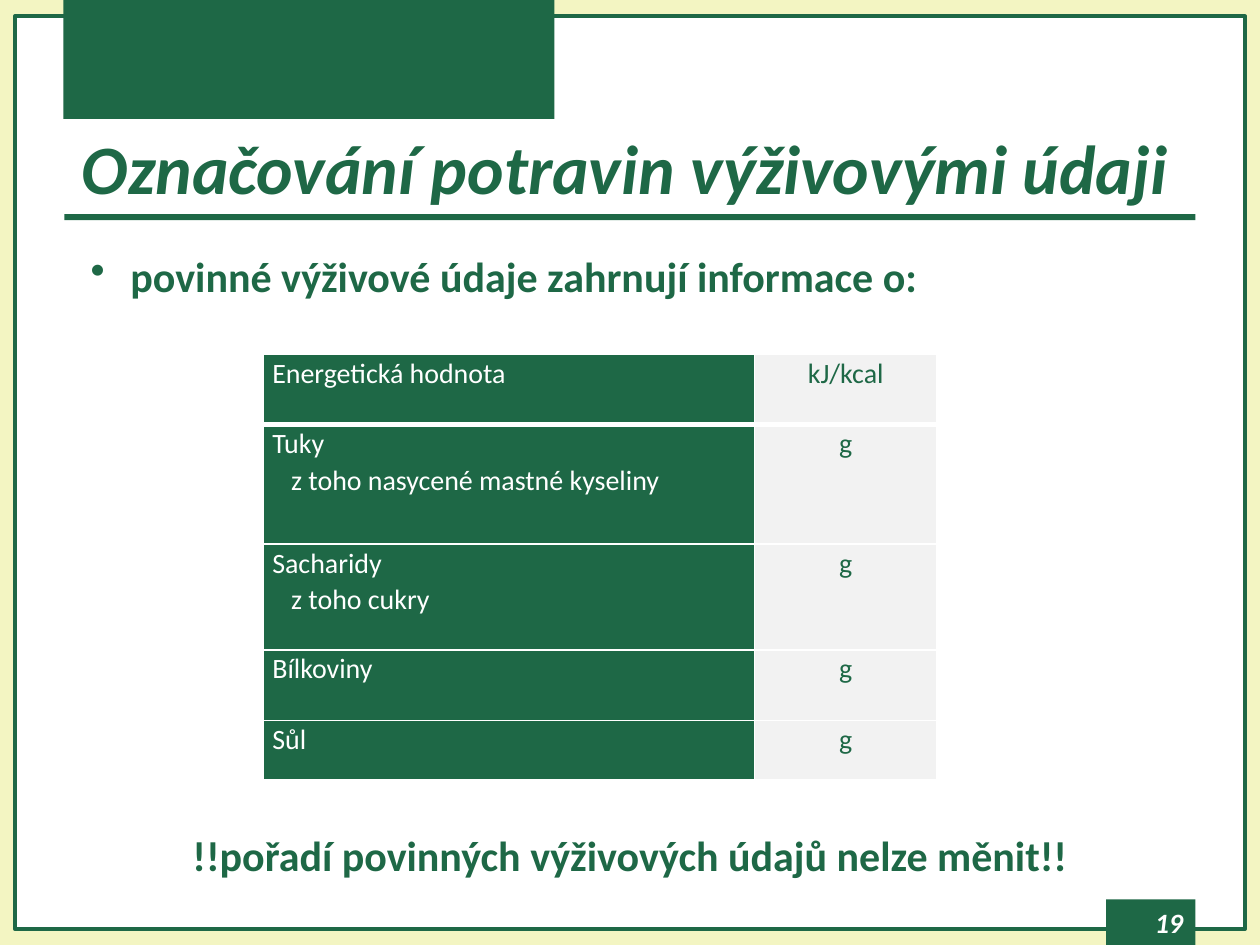
from dataclasses import dataclass

import lxml.etree
import pptx
import pptx.dml.color
import pptx.enum.shapes
import pptx.enum.text
import pptx.oxml.ns
import pptx.util

Cm = pptx.util.Cm
Pt = pptx.util.Pt
RGBColor = pptx.dml.color.RGBColor
Align = pptx.enum.text.PP_ALIGN
Anchor = pptx.enum.text.MSO_ANCHOR

GREEN = RGBColor(0x1E, 0x68, 0x46)
CREAM = RGBColor(0xF3, 0xF5, 0xC2)
GREY = RGBColor(0xF2, 0xF2, 0xF2)
WHITE = RGBColor(0xFF, 0xFF, 0xFF)
FONT = "Calibri"


@dataclass
class Area:
    left: float
    top: float
    width: float
    height: float

    def lengths(self) -> list:
        return [Cm(n) for n in (self.left, self.top, self.width, self.height)]


@dataclass
class Nutrient:
    name: str
    unit: str
    height: float
    detail: str = ""


NUTRIENTS = [
    Nutrient("Energetická hodnota", "kJ/kcal", 1.42),
    Nutrient("Tuky", "g", 2.41, "z\u00a0toho nasycené mastné kyseliny".replace("\u00a0", " ")),
    Nutrient("Sacharidy", "g", 2.13, "z toho cukry"),
    Nutrient("Bílkoviny", "g", 1.42),
    Nutrient("Sůl", "g", 1.19),
]
COLUMN_WIDTHS = (9.9, 3.68)


def add_span(para, text: str, size: float, color: RGBColor,
             bold: bool = False, italic: bool = False) -> None:
    span = para.add_run()
    span.text = text
    font = span.font
    font.name, font.size, font.bold, font.italic = FONT, Pt(size), bold, italic
    font.color.rgb = color


def add_block(page, area: Area, fill: RGBColor, outlined: bool = False) -> None:
    block = page.shapes.add_shape(
        pptx.enum.shapes.MSO_SHAPE.RECTANGLE, *area.lengths())
    block.shadow.inherit = False
    block.fill.solid()
    block.fill.fore_color.rgb = fill
    if outlined:
        block.line.color.rgb = GREEN
        block.line.width = Pt(2.25)
    else:
        block.line.fill.background()


def add_label(page, area: Area, text: str, size: float, color: RGBColor,
              align: Align, italic: bool = False, bullet: bool = False) -> None:
    box = page.shapes.add_textbox(*area.lengths())
    box.text_frame.word_wrap = True
    para = box.text_frame.paragraphs[0]
    para.alignment = align
    if bullet:
        set_indent(para, 0.8, -0.8)
        mark = lxml.etree.SubElement(para._p.get_or_add_pPr(),
                                     pptx.oxml.ns.qn("a:buChar"))
        mark.set("char", "•")
    add_span(para, text, size, color, bold=True, italic=italic)


def set_indent(para, left: float, first: float = 0) -> None:
    properties = para._p.get_or_add_pPr()
    properties.set("marL", str(Cm(left)))
    properties.set("indent", str(Cm(first)))


def set_borders(cell, bottom: float) -> None:
    properties = cell._tc.get_or_add_tcPr()
    widths = {"lnL": 1, "lnR": 1, "lnT": 1, "lnB": bottom}
    for position, (side, width) in enumerate(widths.items()):
        line = pptx.oxml.parse_xml(
            f'<a:{side} {pptx.oxml.ns.nsdecls("a")} w="{Pt(width)}"><a:solidFill>'
            f'<a:srgbClr val="{WHITE}"/></a:solidFill></a:{side}>')
        properties.insert(position, line)


def fill_cell(cell, lines: list[str], fill: RGBColor, color: RGBColor,
              align: Align, bottom: float) -> None:
    cell.fill.solid()
    cell.fill.fore_color.rgb = fill
    cell.margin_left = cell.margin_right = Cm(0.18)
    cell.margin_top = cell.margin_bottom = 0
    set_borders(cell, bottom)
    for number, text in enumerate(lines):
        frame = cell.text_frame
        para = frame.add_paragraph() if number else frame.paragraphs[0]
        para.alignment = align
        para.line_spacing = 1.07
        if number:
            set_indent(para, 0.38)
        add_span(para, text, 16, color)


def add_nutrient_table(page) -> None:
    area = Area(5.31, 7.14, sum(COLUMN_WIDTHS), sum(n.height for n in NUTRIENTS))
    table = page.shapes.add_table(
        len(NUTRIENTS), len(COLUMN_WIDTHS), *area.lengths()).table
    for column, width in zip(table.columns, COLUMN_WIDTHS):
        column.width = Cm(width)
    for number, nutrient in enumerate(NUTRIENTS):
        table.rows[number].height = Cm(nutrient.height)
        bottom = 1 if number else 3
        names = [text for text in (nutrient.name, nutrient.detail) if text]
        fill_cell(table.cell(number, 0), names, GREEN, WHITE, Align.LEFT, bottom)
        fill_cell(table.cell(number, 1), [nutrient.unit], GREY, GREEN,
                  Align.CENTER, bottom)


def add_title(page, text: str) -> None:
    title = page.shapes.title
    title.left, title.top, title.width, title.height = Area(
        1.27, 0.76, 22.86, 3.56).lengths()
    frame = title.text_frame
    frame.auto_size = pptx.enum.text.MSO_AUTO_SIZE.NONE
    frame.vertical_anchor = Anchor.BOTTOM
    frame.margin_right = Cm(0.58)
    para = frame.paragraphs[0]
    para.alignment = Align.RIGHT
    add_span(para, text, 39.6, GREEN, bold=True, italic=True)
    # Bring the title in front of the decoration
    page.shapes._spTree.append(title._element)


def main() -> None:
    deck = pptx.Presentation()
    deck.slide_width, deck.slide_height = Cm(25.4), Cm(19.05)
    page = deck.slides.add_slide(deck.slide_layouts[5])
    page.background.fill.solid()
    page.background.fill.fore_color.rgb = CREAM

    # Frame, page number tab, title rule and top block
    add_block(page, Area(0.3, 0.33, 24.8, 18.4), WHITE, outlined=True)
    add_block(page, Area(22.3, 18.13, 1.8, 0.92), GREEN)
    add_block(page, Area(1.3, 4.32, 22.8, 0.12), GREEN)
    add_block(page, Area(1.28, 0, 9.9, 2.4), GREEN)
    add_label(page, Area(21.7, 18.13, 2.4, 0.94), "19", 16, WHITE,
              Align.RIGHT, italic=True)

    # Title and content
    add_title(page, "Označování potravin výživovými údaji")
    add_label(page, Area(1.58, 4.93, 17.32, 1.27),
              "povinné výživové údaje zahrnují informace o:", 24, GREEN,
              Align.LEFT, bullet=True)
    add_nutrient_table(page)
    add_label(page, Area(0.6, 16.59, 24.2, 1.27),
              "!!pořadí povinných výživových údajů nelze měnit!!", 24, GREEN,
              Align.CENTER)
    deck.save("out.pptx")


if __name__ == "__main__":
    main()
